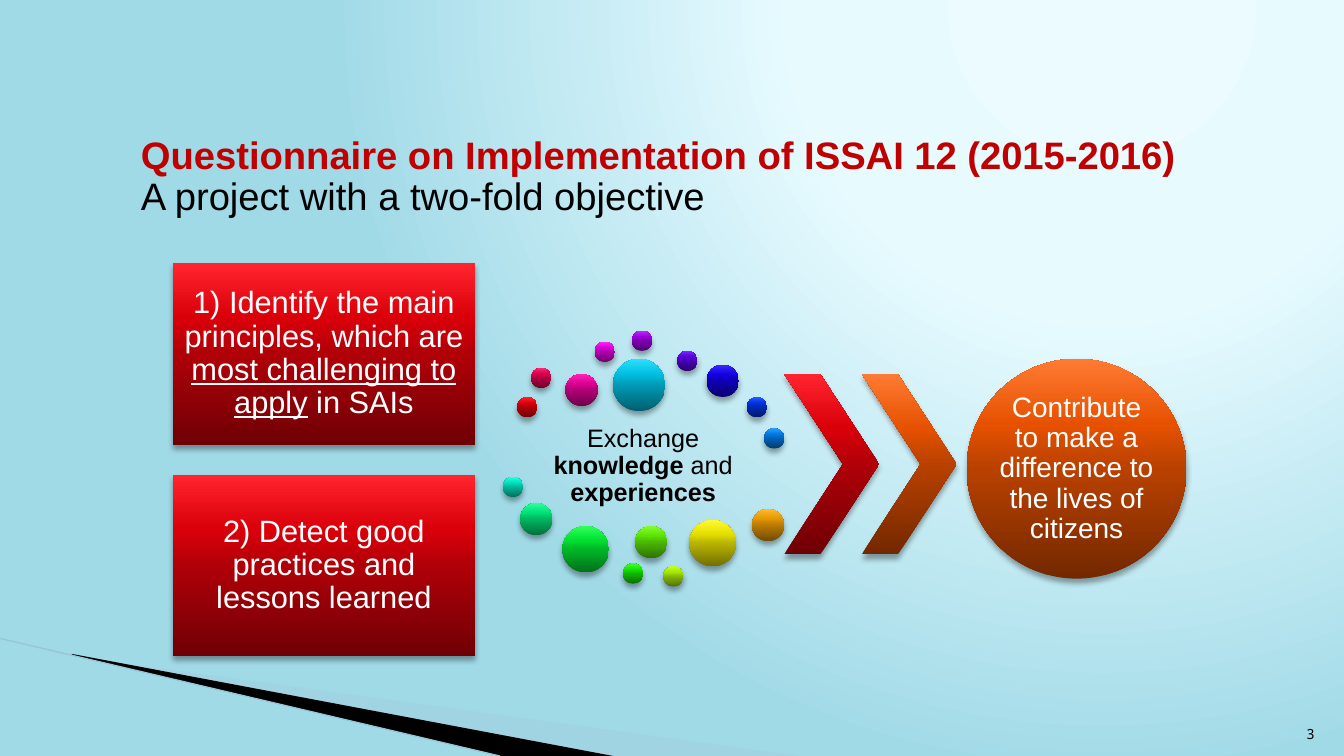
import colorsys

from lxml import etree
from pptx import Presentation
from pptx.dml.color import RGBColor
from pptx.enum import shapes as kinds, text as txt
from pptx.oxml import parse_xml
from pptx.oxml.ns import qn
from pptx.util import Pt

BLACK = RGBColor(0x00, 0x00, 0x00)
WHITE = RGBColor(0xFF, 0xFF, 0xFF)
TITLE_RED = RGBColor(0xC0, 0x00, 0x00)
PALE_WEDGE = RGBColor(0xA0, 0xCB, 0xDC)
EDGE_BLUE = RGBColor(0x97, 0xC5, 0xD8)
SKY = [(0, RGBColor(0xEB, 0xFB, 0xFF)), (40, RGBColor(0xE7, 0xFB, 0xFF)), (100, RGBColor(0xA1, 0xDA, 0xE7))]

MAIN = 'xmlns:a="http://schemas.openxmlformats.org/drawingml/2006/main"'
UPWARD = '<a:lin ang="16200000" scaled="0"/>'
FROM_TOP_RIGHT = '<a:path path="circle"><a:fillToRect l="65000" t="0" r="0" b="98000"/></a:path>'
SHADOW = (f'<a:effectLst {MAIN}><a:outerShdw blurRad="50800" dist="38100" dir="5400000" rotWithShape="0">'
          '<a:srgbClr val="000000"><a:alpha val="35000"/></a:srgbClr></a:outerShdw></a:effectLst>')

HUES = 18
SMALL, MEDIUM, LARGE, LARGEST = 14.4, 23, 33.1, 37.4
DOTS = [
    (10.4, 47.7, SMALL), (20.4, 26.8, SMALL), (44.9, 31.1, MEDIUM),
    (65.8, 8.1, SMALL), (92.4, 0.2, SMALL), (124.8, 14.6, SMALL),
    (145.7, 24.6, MEDIUM), (174.5, 47.7, SMALL), (186.8, 70, SMALL),
    (78.8, 20.3, LARGEST), (0.3, 104.6, SMALL), (12.5, 123.3, MEDIUM),
    (42.8, 139.8, LARGE), (86, 166.5, SMALL), (94.6, 139.8, MEDIUM),
    (114.8, 168.6, SMALL), (133.5, 135.5, LARGE), (178.1, 127.6, MEDIUM),
]
OBJECTIVES = [
    [("1) Identify the main principles, which are ", {}),
     ("most challenging to apply", {"underline": True}), (" in SAIs", {})],
    [("2) Detect good practices and lessons learned", {})],
]


def gradient(stops, direction):
    """Return a gradient fill element for (percent, colour) stops."""
    marks = "".join(f'<a:gs pos="{at * 1000}"><a:srgbClr val="{colour}"/></a:gs>' for at, colour in stops)
    return parse_xml(f'<a:gradFill {MAIN} rotWithShape="1"><a:gsLst>{marks}</a:gsLst>{direction}</a:gradFill>')


def glossy_stops(step):
    """Return the dark-to-bright stops of one step round the colour wheel."""
    part = step / HUES
    hue = (357.3 - 18.68 * step) / 360
    tones = [(0, 1, 0.43 + 0.02 * part), (50, 1, 0.69 + 0.035 * part),
             (70, 1, 0.855 + 0.047 * part), (100, 0.86 - 0.06 * part, 1)]
    return [(at, RGBColor(*(round(255 * c) for c in colorsys.hsv_to_rgb(hue, depth, light))))
            for at, depth, light in tones]


def add_glossy(slide, kind, left, top, width, height, step):
    """Add a preset shape with a glossy fill and a soft shadow."""
    glossy = slide.shapes.add_shape(kind, Pt(left), Pt(top), Pt(width), Pt(height))
    glossy.line.fill.background()
    glossy.fill.solid()
    props = glossy._element.spPr
    props.replace(props.find(qn("a:solidFill")), gradient(glossy_stops(step), UPWARD))
    props.append(parse_xml(SHADOW))
    return glossy


def add_label(slide, left, top, width, height):
    """Add an empty wrapping text box."""
    label = slide.shapes.add_textbox(Pt(left), Pt(top), Pt(width), Pt(height))
    label.text_frame.word_wrap = True
    return label


def style(run, size, colour, bold=False, underline=None, face="Arial"):
    """Format one run."""
    run.font.name, run.font.size = face, Pt(size)
    run.font.bold, run.font.underline = bold, underline
    run.font.color.rgb = colour


def write_centred(frame, pieces, size, colour, inset):
    """Fill a frame with centred pieces of text in the middle."""
    frame.word_wrap = True
    frame.vertical_anchor = txt.MSO_ANCHOR.MIDDLE
    frame.margin_left = frame.margin_right = frame.margin_top = frame.margin_bottom = Pt(inset)
    paragraph = frame.paragraphs[0]
    paragraph.alignment = txt.PP_ALIGN.CENTER
    paragraph.line_spacing = 0.9
    for words, look in pieces:
        run = paragraph.add_run()
        run.text = words
        style(run, size, colour, **look)


def draw_backdrop(slide, width, height):
    """Draw the sky and the sweeping wedges at the lower left."""
    slide.background.fill.solid()
    sky = slide.background._cSld.bg.bgPr
    sky.replace(sky.find(qn("a:solidFill")), gradient(SKY, FROM_TOP_RIGHT))
    wedges = [
        (PALE_WEDGE, [(52.6, height - 71.3), (571, height), (438, height), (52.6, height - 72)]),
        (BLACK, [(51.1, height - 72.7), (438.5, height), (357, height), (51.8, height - 72)]),
    ]
    for colour, corners in wedges:
        outline = slide.shapes.build_freeform(*corners[0], scale=Pt(1))
        outline.add_line_segments(corners[1:], close=True)
        wedge = outline.convert_to_shape()
        wedge.shadow.inherit = False
        wedge.line.fill.background()
        wedge.fill.solid()
        wedge.fill.fore_color.rgb = colour
        if colour == PALE_WEDGE:
            tint = wedge._element.spPr.find(f".//{qn('a:srgbClr')}")
            etree.SubElement(tint, qn("a:alpha")).set("val", "40000")
    edge = slide.shapes.add_connector(kinds.MSO_CONNECTOR.STRAIGHT, 0, Pt(height - 84), Pt(357), Pt(height))
    edge.line.color.rgb = EDGE_BLUE
    edge.line.width = Pt(0.95)
    etree.SubElement(edge._element.spPr, qn("a:effectLst"))


def draw_title(slide, left, top, width, height):
    """Write the two-line title."""
    frame = add_label(slide, left, top, width, height).text_frame
    frame.vertical_anchor = txt.MSO_ANCHOR.MIDDLE
    paragraph = frame.paragraphs[0]
    paragraph.text = "Questionnaire on Implementation of ISSAI 12 (2015-2016)\vA project with a two-fold objective"
    paragraph.line_spacing = 0.9
    heading, subtitle = paragraph.runs
    style(heading, 27.3, TITLE_RED, bold=True)
    style(subtitle, 27.3, BLACK)


def draw_objectives(slide, left, top, width, height, gap):
    """Stack the objective panels."""
    panel_height = (height - gap * (len(OBJECTIVES) - 1)) / len(OBJECTIVES)
    for row, pieces in enumerate(OBJECTIVES):
        panel = add_glossy(slide, kinds.MSO_SHAPE.RECTANGLE, left, top + row * (panel_height + gap),
                           width, panel_height, 0)
        write_centred(panel.text_frame, pieces, 22, WHITE, 6.5)


def draw_exchange(slide, left, top):
    """Draw the ring of coloured dots round its caption."""
    caption = add_label(slide, left + 21.2, top + 63.5, 158.4, 67)
    write_centred(caption.text_frame,
                  [("Exchange ", {}), ("knowledge", {"bold": True}), (" and ", {}),
                   ("experiences", {"bold": True})], 18, BLACK, 2)
    for step, (x, y, size) in enumerate(DOTS):
        add_glossy(slide, kinds.MSO_SHAPE.OVAL, left + x, top + y, size, size, step)


def draw_outcome(slide, left, top, height):
    """Draw the two chevrons and the outcome circle."""
    for place, step in enumerate((0, HUES)):
        chevron = add_glossy(slide, kinds.MSO_SHAPE.CHEVRON, left + 55.4 * place, top + 10.8, 67.7, 128.9, step)
        chevron.adjustments[0] = 0.62
    goal = add_glossy(slide, kinds.MSO_SHAPE.OVAL, left + 130.3, top, height, height, HUES)
    write_centred(goal.text_frame, [("Contribute to make a difference to the lives of citizens", {})],
                  20, WHITE, 0)


def draw_page_number(slide, left, top, width, height):
    """Write the page number."""
    frame = add_label(slide, left, top, width, height).text_frame
    frame.text = "3"
    frame.vertical_anchor = txt.MSO_ANCHOR.BOTTOM
    frame.paragraphs[0].alignment = txt.PP_ALIGN.RIGHT
    style(frame.paragraphs[0].runs[0], 10, BLACK, face="Noto Sans Mono")


def main():
    """Build the slide and save it."""
    deck = Presentation()
    deck.slide_width, deck.slide_height = Pt(960), Pt(540)
    slide = deck.slides.add_slide(deck.slide_layouts[6])
    draw_backdrop(slide, 960, 540)
    draw_exchange(slide, 359, 236)
    draw_outcome(slide, 560.2, 256.3, 157)
    draw_objectives(slide, 123.4, 188, 216, 280.8, 21.6)
    draw_page_number(slide, 908, 504.7, 38.2, 28.8)
    draw_title(slide, 93.6, 87.1, 824.4, 79.9)
    deck.save("out.pptx")


if __name__ == "__main__":
    main()
